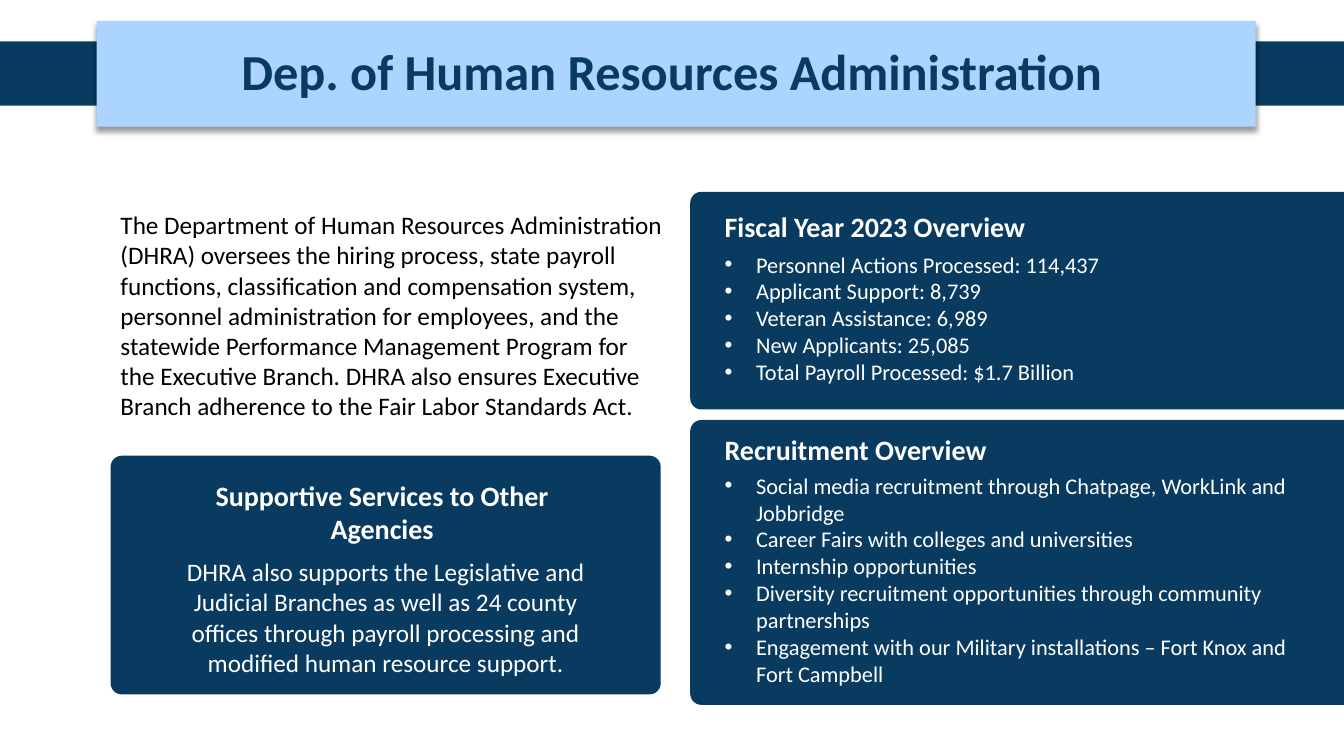
from pptx import Presentation
from pptx.dml.color import RGBColor
from pptx.enum.shapes import MSO_SHAPE
from pptx.enum.text import MSO_ANCHOR, PP_ALIGN
from pptx.oxml import parse_xml
from pptx.oxml.ns import nsdecls, qn
from pptx.util import Pt
from lxml.etree import SubElement

NAVY, SKY, WHITE, BLACK = "093B60", "ABD5FF", "FFFFFF", "000000"
CORNER = 8
INDENT = 22.5
RIGHT_TEXT = 510.5

INTRO = (
    "The Department of Human Resources Administration (DHRA) oversees the hiring "
    "process, state payroll functions, classification and compensation system, "
    "personnel administration for employees, and the statewide Performance "
    "Management Program for the Executive Branch. DHRA also ensures Executive "
    "Branch adherence to the Fair Labor Standards Act."
)
SUPPORT = (
    "DHRA also supports the Legislative and Judicial Branches as well as 24 county "
    "offices through payroll processing and modified human resource support."
)
FISCAL = [
    "Personnel Actions Processed: 114,437",
    "Applicant Support: 8,739",
    "Veteran Assistance: 6,989",
    "New Applicants: 25,085",
    "Total Payroll Processed: $1.7 Billion",
]
RECRUITMENT = [
    "Social media recruitment through Chatpage, WorkLink and Jobbridge",
    "Career Fairs with colleges and universities",
    "Internship opportunities",
    "Diversity recruitment opportunities through community partnerships",
    "Engagement with our Military installations – Fort Knox and Fort Campbell",
]


def rgb(color):
    return RGBColor.from_string(color)


def add_block(s, kind, x, y, w, h, color):
    sp = s.shapes.add_shape(kind, Pt(x), Pt(y), Pt(w), Pt(h))
    sp.shadow.inherit = False
    sp.fill.solid()
    sp.fill.fore_color.rgb = rgb(color)
    sp.line.fill.background()
    return sp


def add_panel(s, x, y, w, h):
    sp = add_block(s, MSO_SHAPE.ROUNDED_RECTANGLE, x, y, w, h, NAVY)
    sp.adjustments[0] = CORNER / min(w, h)


def add_shadow(sp):
    effects = sp._element.spPr.find(qn("a:effectLst"))
    effects.append(parse_xml(
        f'<a:outerShdw {nsdecls("a")} blurRad="{Pt(4)}" dist="{Pt(3)}" '
        'dir="5400000" algn="t" rotWithShape="0"><a:srgbClr val="000000">'
        '<a:alpha val="40000"/></a:srgbClr></a:outerShdw>'))


def add_bullet(p):
    pPr = p._p.get_or_add_pPr()
    pPr.set("marL", str(Pt(INDENT)))
    pPr.set("indent", str(Pt(-INDENT)))
    SubElement(pPr, qn("a:buFont"), typeface="Arial")
    SubElement(pPr, qn("a:buChar"), char="•")


def add_text(s, x, y, w, h, lines, size, color, bold=False,
             align=PP_ALIGN.LEFT, bullets=False):
    tf = s.shapes.add_textbox(Pt(x), Pt(y), Pt(w), Pt(h)).text_frame
    tf.word_wrap = True
    for i, line in enumerate(lines):
        p = tf.paragraphs[0] if i == 0 else tf.add_paragraph()
        p.alignment = align
        if bullets:
            add_bullet(p)
        r = p.add_run()
        r.text = line
        r.font.name = "Calibri"
        r.font.size = Pt(size)
        r.font.bold = bold
        r.font.color.rgb = rgb(color)
    return tf


def add_header(s, title):
    for x in (873, 0):
        add_block(s, MSO_SHAPE.RECTANGLE, x, 29.5, 87, 46, NAVY)
    add_shadow(add_block(s, MSO_SHAPE.RECTANGLE, 69, 15, 828, 75.5, SKY))
    tf = add_text(s, 66, 25, 828, 55.5, [title], 36, NAVY, True, PP_ALIGN.CENTER)
    tf.vertical_anchor = MSO_ANCHOR.MIDDLE
    tf.paragraphs[0].line_spacing = 0.9


def add_overview(s, y, h, heading, heading_y, items, items_y, items_w, items_h):
    add_panel(s, 493, y, 508.5, h)
    add_text(s, RIGHT_TEXT, heading_y, 277, 31.5, [heading], 20, WHITE, True)
    add_text(s, RIGHT_TEXT, items_y, items_w, items_h, items, 16, WHITE, bullets=True)


def main():
    prs = Presentation()
    prs.slide_width, prs.slide_height = Pt(960), Pt(540)
    s = prs.slides.add_slide(prs.slide_layouts[6])
    add_header(s, "Dep. of Human Resources Administration")
    add_text(s, 79, 146, 404, 160, [INTRO], 18, BLACK)
    add_panel(s, 79, 325.5, 393, 170.5)
    add_text(s, 108, 394, 335, 94, [SUPPORT], 18, WHITE, align=PP_ALIGN.CENTER)
    add_text(s, 134.5, 338, 277, 55.5, ["Supportive Services to Other Agencies"],
             20, WHITE, True, PP_ALIGN.CENTER)
    add_overview(s, 137, 155.5, "Fiscal Year 2023 Overview", 146,
                 FISCAL, 175.5, 422.5, 104.5)
    add_overview(s, 300, 203.5, "Recruitment Overview", 305.5,
                 RECRUITMENT, 333.5, 436.5, 162.5)
    prs.save("out.pptx")


if __name__ == "__main__":
    main()
